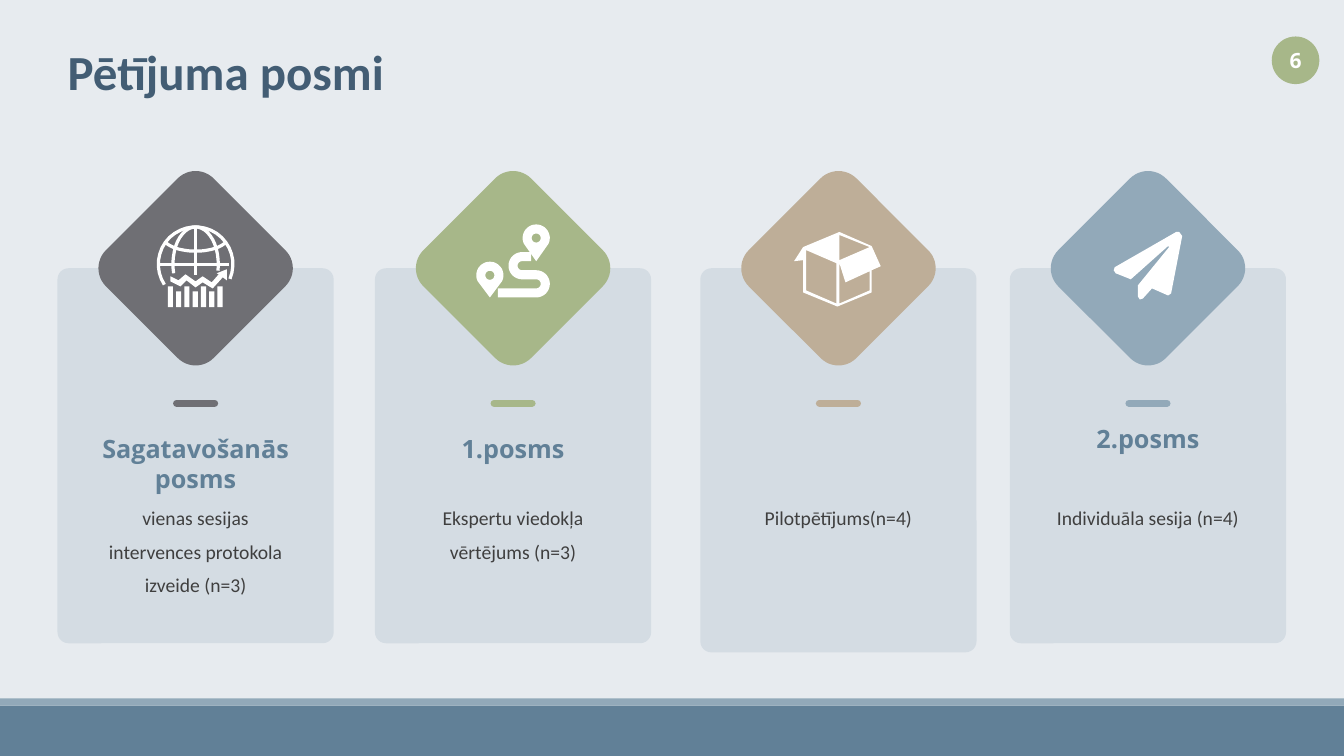
from dataclasses import dataclass
from math import cos, radians, sin

from lxml.etree import SubElement
from pptx import Presentation
from pptx.dml.color import RGBColor
from pptx.enum.shapes import MSO_CONNECTOR, MSO_SHAPE
from pptx.enum.text import MSO_ANCHOR, PP_ALIGN
from pptx.oxml.ns import qn
from pptx.shapes.autoshape import Shape
from pptx.slide import Slide
from pptx.text.text import TextFrame
from pptx.util import Cm, Pt

BACKGROUND = RGBColor(0xE7, 0xEB, 0xEF)
CARD = RGBColor(0xD4, 0xDC, 0xE3)
NAVY = RGBColor(0x43, 0x5D, 0x74)
BLUE = RGBColor(0x61, 0x80, 0x97)
LIGHT_BLUE = RGBColor(0x92, 0xA9, 0xB9)
GREEN = RGBColor(0xA7, 0xB7, 0x89)
GREY = RGBColor(0x6F, 0x6F, 0x74)
SAND = RGBColor(0xBE, 0xAE, 0x98)
DARK = RGBColor(0x3F, 0x3F, 0x3F)
WHITE = RGBColor(0xFF, 0xFF, 0xFF)

SLIDE_WIDTH, SLIDE_HEIGHT = 33.87, 19.05
CARD_TOP, CARD_WIDTH = 6.76, 6.96
DIAMOND_SIZE = 3.84
ICON_UNIT = 0.0254  # cm per icon grid step, measured from the diamond centre
SUBSTEPS = 10

Contour = list[tuple[float, float]]


@dataclass(frozen=True)
class IconPart:
    """Filled outline, or open lines when a stroke weight in points is given."""
    contours: list[Contour]
    stroke: float = 0


@dataclass(frozen=True)
class Stage:
    left: float
    color: RGBColor
    icon: list[IconPart]
    description: str
    heading: str = ""
    card_height: float = 9.45
    heading_in_card: bool = False


def arc(x: float, y: float, rx: float, ry: float, start: float, end: float) -> Contour:
    """Points on an ellipse; angles in degrees, clockwise from the right."""
    steps = 24
    angles = [radians(start + (end - start) * i / steps) for i in range(steps + 1)]
    return [(x + rx * cos(a), y + ry * sin(a)) for a in angles]


def map_pin(x: float, y: float, tip_y: float) -> IconPart:
    return IconPart([arc(x, y, 13.5, 13.5, 155, 385) + [(x, tip_y)],
                     arc(x, y, 4.5, 4.5, 0, 360)])


GLOBE = [
    IconPart([arc(0, -4, 37, 37, 147, 383), arc(0, -4, 22.5, 37, 166, 370),
              arc(0, -32, 33, 15, 28, 152), [(-37, -4), (33, -4)],
              [(0, -41), (0, 7)]], stroke=2.3),
    IconPart([[(23, 6), (16, 14), (7, 8), (0, 13), (-10, 6), (-17, 12), (-25, 8),
               (-25, 13), (-15, 18), (-9, 12), (0, 19), (7, 14), (17, 20),
               (27, 9), (31, 12), (31, 1), (21, 5)]]),
    IconPart([[(x, top), (x + 5, top), (x + 5, 38.5), (x, 38.5)]
              for x, top in ((-27.5 + 8.2 * i, 23 if i % 2 else 18) for i in range(7))]),
]
ROUTE = [
    map_pin(-23, 7, 29),
    map_pin(23, -30, -7),
    IconPart([[(-15, 24.5)] + arc(23, 15.5, 9, 9, 90, -90)
              + arc(9, -2.5, 9, 9, 90, 270) + [(18, -11.5)]], stroke=6.5),
]
BOX = [IconPart([
    [(42, -2), (33, -22), (1, -36), (-35, -21), (-44, -7), (-35, -8), (-35, 24),
     (-1, 38), (33, 24), (33, 2)],
    [(1, -8), (1, -33), (31, -21)],
    [(-2, 35), (-32, 22), (-32, -18), (-2, -5)],
    [(31, 22), (1, 35), (1, -5), (7, 14), (31, 3)],
])]
PAPER_PLANE = [IconPart([
    [(31, -36), (28, -36), (-33, -1), (-34, 2), (-32, 5), (-17, 11), (20, -22),
     (21, -21), (-10, 17), (-10, 28), (-8, 31), (-5, 30), (4, 20), (20, 27),
     (23, 25), (34, -32)],
])]

STAGES = [
    Stage(1.45, GREY, GLOBE, "vienas sesijas intervences protokola izveide (n=3)",
          "Sagatavošanās posms"),
    Stage(9.45, GREEN, ROUTE, "Ekspertu viedokļa vērtējums (n=3)", "1.posms"),
    Stage(17.65, SAND, BOX, "Pilotpētījums(n=4)", card_height=9.68),
    Stage(25.45, LIGHT_BLUE, PAPER_PLANE, "Individuāla sesija (n=4)", "2.posms",
          heading_in_card=True),
]


def add_filled(slide: Slide, kind: MSO_SHAPE, left: float, top: float,
               width: float, height: float, color: RGBColor) -> Shape:
    shape = slide.shapes.add_shape(kind, Cm(left), Cm(top), Cm(width), Cm(height))
    shape.shadow.inherit = False
    shape.fill.solid()
    shape.fill.fore_color.rgb = color
    shape.line.fill.background()
    return shape


def write(frame: TextFrame, text: str, size: float, font: str, color: RGBColor,
          bold: bool = False, align: PP_ALIGN = PP_ALIGN.CENTER,
          spacing: float = 1.0) -> None:
    frame.text = text
    frame.word_wrap = True
    paragraph = frame.paragraphs[0]
    paragraph.alignment = align
    paragraph.line_spacing = spacing
    run_font = paragraph.runs[0].font
    run_font.size, run_font.name, run_font.bold = Pt(size), font, bold
    run_font.color.rgb = color


def add_icon_part(slide: Slide, center_x: float, part: IconPart) -> None:
    first, *others = [[(x * SUBSTEPS, y * SUBSTEPS) for x, y in contour]
                      for contour in part.contours]
    closed = not part.stroke
    builder = slide.shapes.build_freeform(*first[0], scale=Cm(ICON_UNIT) / SUBSTEPS)
    builder.add_line_segments(first[1:], close=closed)
    for contour in others:
        builder.move_to(*contour[0])
        builder.add_line_segments(contour[1:], close=closed)
    shape = builder.convert_to_shape(Cm(center_x), Cm(CARD_TOP))
    shape.shadow.inherit = False
    if part.stroke:
        shape.fill.background()
        shape.line.color.rgb = WHITE
        shape.line.width = Pt(part.stroke)
    else:
        shape.fill.solid()
        shape.fill.fore_color.rgb = WHITE
        shape.line.fill.background()


def add_dash(slide: Slide, center_x: float, color: RGBColor) -> None:
    dash = slide.shapes.add_connector(MSO_CONNECTOR.STRAIGHT, Cm(center_x - 0.48),
                                      Cm(10.16), Cm(center_x + 0.48), Cm(10.16))
    dash.line.color.rgb = color
    dash.line.width = Pt(5)
    dash.line._get_or_add_ln().set("cap", "rnd")
    SubElement(dash._element.spPr, qn("a:effectLst"))


def add_stage(slide: Slide, stage: Stage) -> None:
    center_x = stage.left + CARD_WIDTH / 2
    card = add_filled(slide, MSO_SHAPE.ROUNDED_RECTANGLE, stage.left, CARD_TOP,
                      CARD_WIDTH, stage.card_height, CARD)
    card.adjustments[0] = 0.04
    diamond = add_filled(slide, MSO_SHAPE.ROUNDED_RECTANGLE, center_x - DIAMOND_SIZE / 2,
                         CARD_TOP - DIAMOND_SIZE / 2, DIAMOND_SIZE, DIAMOND_SIZE,
                         stage.color)
    diamond.rotation = 45
    for part in stage.icon:
        add_icon_part(slide, center_x, part)
    add_dash(slide, center_x, stage.color)

    if stage.heading:
        if stage.heading_in_card:
            heading = card.text_frame
            heading.vertical_anchor = MSO_ANCHOR.MIDDLE
            heading.margin_bottom = Cm(0.99)
        else:
            heading = slide.shapes.add_textbox(Cm(center_x - 2.65), Cm(10.8),
                                               Cm(5.3), Cm(1.8)).text_frame
        write(heading, stage.heading, 18, "Open Sans", BLUE, bold=True)
    description = slide.shapes.add_textbox(Cm(center_x - 2.68), Cm(12.37), Cm(5.36), Cm(3.05))
    write(description.text_frame, stage.description, 14, "Calibri", DARK, spacing=1.43)


def main() -> None:
    deck = Presentation()
    deck.slide_width, deck.slide_height = Cm(SLIDE_WIDTH), Cm(SLIDE_HEIGHT)
    slide = deck.slides.add_slide(deck.slide_layouts[5])
    slide.background.fill.solid()
    slide.background.fill.fore_color.rgb = BACKGROUND

    title = slide.shapes.title
    title.left, title.top, title.width, title.height = Cm(1.45), Cm(0.99), Cm(29.21), Cm(1.68)
    title.text_frame.vertical_anchor = MSO_ANCHOR.BOTTOM
    write(title.text_frame, "Pētījuma posmi", 35, "Calibri", NAVY, bold=True,
          align=PP_ALIGN.LEFT, spacing=0.85)

    add_filled(slide, MSO_SHAPE.RECTANGLE, 0, 17.78, SLIDE_WIDTH, 1.27, BLUE)
    add_filled(slide, MSO_SHAPE.RECTANGLE, 0, 17.6, SLIDE_WIDTH, 0.18, LIGHT_BLUE)
    badge = add_filled(slide, MSO_SHAPE.OVAL, 32.05, 0.92, 1.2, 1.2, GREEN)
    badge.text_frame.margin_left = badge.text_frame.margin_right = Cm(0)
    badge.text_frame.vertical_anchor = MSO_ANCHOR.MIDDLE
    write(badge.text_frame, "6", 15, "Open Sans", WHITE, bold=True)

    for stage in STAGES:
        add_stage(slide, stage)
    deck.save("out.pptx")


if __name__ == "__main__":
    main()
